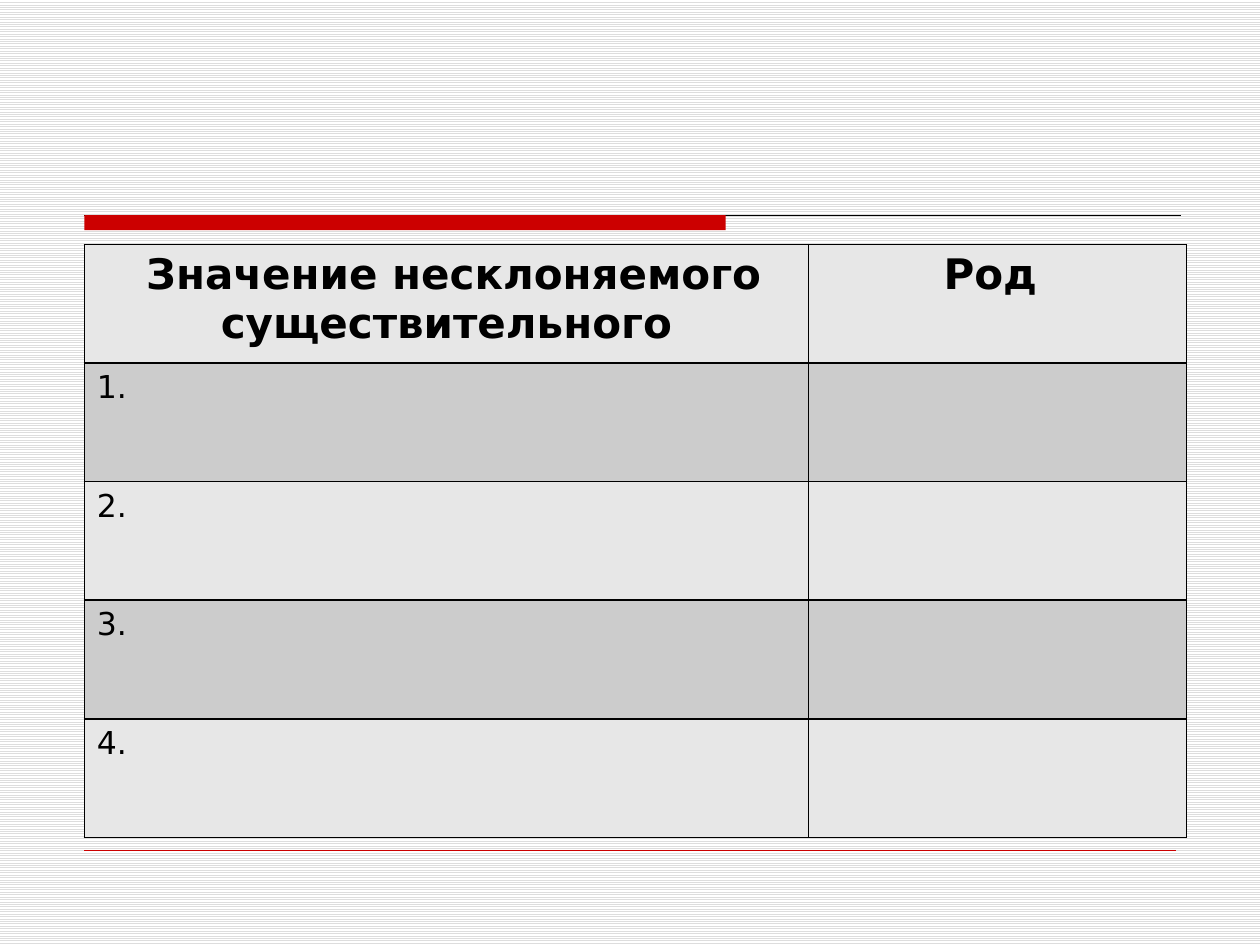
from dataclasses import dataclass

from pptx import Presentation
from pptx.dml.color import RGBColor as RGB
from pptx.enum.dml import MSO_PATTERN as Pattern
from pptx.enum.shapes import MSO_CONNECTOR as Link, MSO_SHAPE as Shape
from pptx.enum.text import PP_ALIGN as Align
from pptx.oxml import parse_xml
from pptx.oxml.ns import nsdecls
from pptx.util import Cm, Pt


@dataclass
class Theme:
    font: str = "DejaVu Sans"
    head: int = 24
    body: int = 18
    ink: str = "000000"
    red: str = "CC0000"
    light: str = "E7E7E7"
    dark: str = "CCCCCC"
    stripe: str = "DDDDDD"
    paper: str = "FFFFFF"


theme = Theme()


def write(frame, text, size=theme.body, bold=False, align=Align.LEFT):
    para = frame.paragraphs[0]
    para.alignment = align
    run = para.add_run()
    run.text = text
    font = run.font
    font.name, font.size, font.bold = theme.font, Pt(size), bold
    font.color.rgb = RGB.from_string(theme.ink)


deck = Presentation()
deck.slide_width, deck.slide_height = Cm(25.4), Cm(19.05)
slide = deck.slides.add_slide(deck.slide_layouts[6])

# Striped background
fill = slide.background.fill
fill.patterned()
fill.pattern = Pattern.LIGHT_HORIZONTAL
fill.fore_color.rgb = RGB.from_string(theme.stripe)
fill.back_color.rgb = RGB.from_string(theme.paper)

# Rules above and below the table
left = Cm(1.7)
for top, right, color, width in [
    (4.34, 23.8, theme.ink, 0.75),
    (17.15, 23.7, theme.red, 0.25),
]:
    rule = slide.shapes.add_connector(
        Link.STRAIGHT, left, Cm(top), Cm(right), Cm(top))
    rule.line.color.rgb = RGB.from_string(color)
    rule.line.width = Pt(width)
    rule._element.spPr.append(parse_xml(f"<a:effectLst {nsdecls('a')}/>"))

# Red bar
bar = slide.shapes.add_shape(
    Shape.RECTANGLE, left, Cm(4.34), Cm(12.93), Cm(0.3))
bar.shadow.inherit = False
bar.fill.solid()
bar.fill.fore_color.rgb = RGB.from_string(theme.red)
bar.line.fill.background()

# Table
rows = [(" Значение несклоняемого существительного", "Род ")]
rows += [(f"{num}.", "") for num in range(1, 5)]
widths = [Cm(14.6), Cm(7.62)]
height = Cm(2.39)
table = slide.shapes.add_table(
    len(rows), len(widths), left, Cm(4.93), sum(widths), height * len(rows)
).table
for col, width in zip(table.columns, widths):
    col.width = width

for i, row in enumerate(rows):
    table.rows[i].height = height
    for j, text in enumerate(row):
        cell = table.cell(i, j)
        # Borders come before the fill in the cell's XML
        for side in ("lnL", "lnR", "lnT", "lnB"):
            cell._tc.get_or_add_tcPr().append(parse_xml(
                f'<a:{side} {nsdecls("a")} w="{Pt(1)}"><a:solidFill>'
                f'<a:srgbClr val="{theme.ink}"/></a:solidFill></a:{side}>'))
        cell.fill.solid()
        shade = theme.dark if i % 2 else theme.light
        cell.fill.fore_color.rgb = RGB.from_string(shade)
        if i == 0:
            write(cell.text_frame, text, size=theme.head, bold=True,
                  align=Align.CENTER)
        elif text:
            write(cell.text_frame, text)

deck.save("out.pptx")
